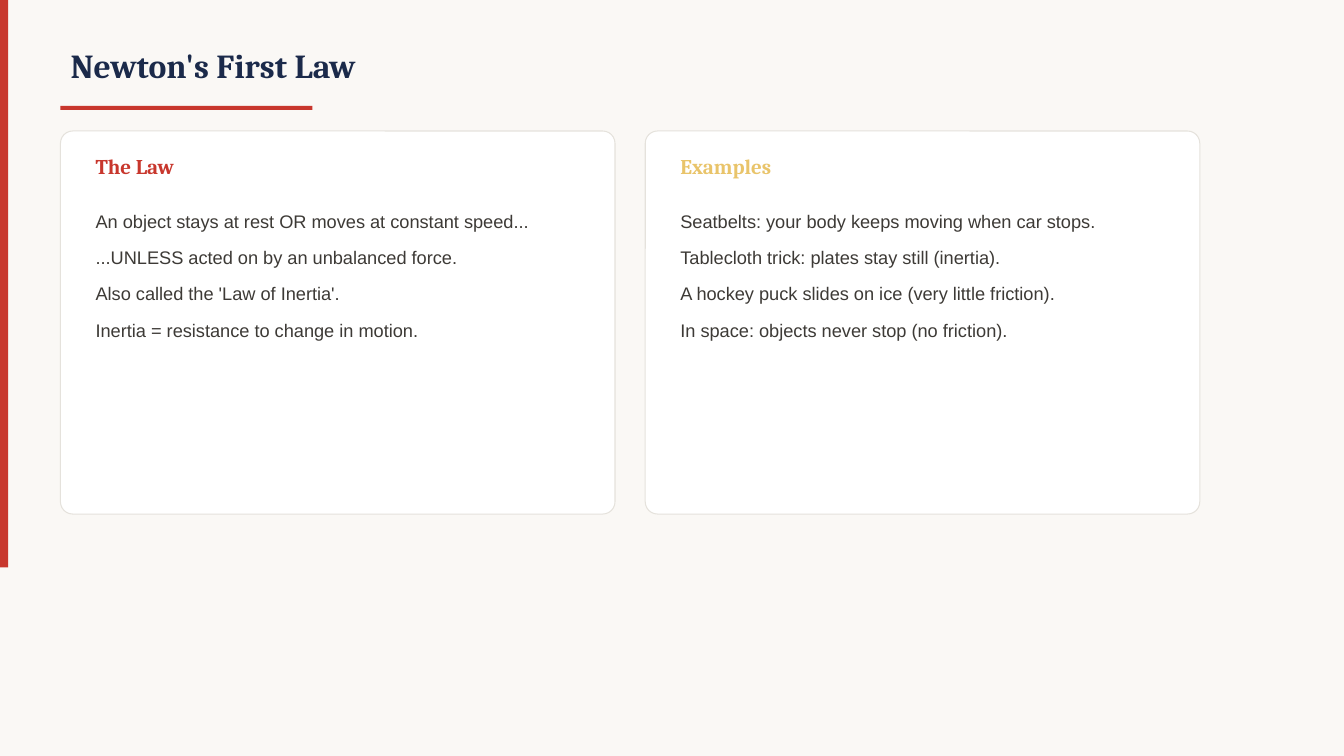
import pptx
import pptx.util
import pptx.dml.color
import pptx.enum.shapes
import pptx.enum.text

RGB = pptx.dml.color.RGBColor
SHAPE = pptx.enum.shapes.MSO_SHAPE
ANCHOR = pptx.enum.text.MSO_ANCHOR
PX = 9144

PAPER = RGB(0xFA, 0xF8, 0xF5)
WHITE = RGB(0xFF, 0xFF, 0xFF)
RED = RGB(0xC8, 0x37, 0x2D)
GOLD = RGB(0xE9, 0xC4, 0x6A)
NAVY = RGB(0x1B, 0x2A, 0x4A)
INK = RGB(0x3D, 0x3A, 0x36)
EDGE = RGB(0xE5, 0xE2, 0xDC)

CARDS = [
    ("The Law", RED, [
        "An object stays at rest OR moves at constant speed...",
        "...UNLESS acted on by an unbalanced force.",
        "Also called the 'Law of Inertia'.",
        "Inertia = resistance to change in motion.",
    ]),
    ("Examples", GOLD, [
        "Seatbelts: your body keeps moving when car stops.",
        "Tablecloth trick: plates stay still (inertia).",
        "A hockey puck slides on ice (very little friction).",
        "In space: objects never stop (no friction).",
    ]),
]


def scale(*box):
    return [pptx.util.Emu(n * PX) for n in box]


def add_block(slide, kind, box, fill):
    shape = slide.shapes.add_shape(kind, *scale(*box))
    shape.shadow.inherit = False
    shape.fill.solid()
    shape.fill.fore_color.rgb = fill
    shape.line.fill.background()
    return shape


def style(para, name, size, color, bold=False):
    for run in para.runs:
        run.font.name = name
        run.font.size = pptx.util.Pt(size)
        run.font.color.rgb = color
        run.font.bold = bold


def add_text(slide, box, lines, anchor):
    frame = slide.shapes.add_textbox(*scale(*box)).text_frame
    frame.word_wrap = True
    frame.vertical_anchor = anchor
    frame.text = "\n".join(lines)
    return frame.paragraphs


def add_head(slide, text, left, top, width, height):
    title = slide.shapes.title
    title.left, title.top, title.width, title.height = scale(left, top, width, height)
    frame = title.text_frame
    frame.text = text
    frame.word_wrap = True
    frame.auto_size = pptx.enum.text.MSO_AUTO_SIZE.NONE
    frame.vertical_anchor = ANCHOR.MIDDLE
    frame.paragraphs[0].alignment = pptx.enum.text.PP_ALIGN.LEFT
    style(frame.paragraphs[0], "Cambria", 24, NAVY, True)
    add_block(slide, SHAPE.RECTANGLE, (left, top + height + 5, 250, 4), RED)


def add_card(slide, head, color, lines, left, top, width, height):
    card = add_block(slide, SHAPE.ROUNDED_RECTANGLE, (left, top, width, height), WHITE)
    card.adjustments[0] = 0.032
    card.line.color.rgb = EDGE
    card.line.width = pptx.util.Pt(0.75)
    inner = left + 25, width - 50
    paras = add_text(slide, (inner[0], top + 15, inner[1], 40), [head], ANCHOR.MIDDLE)
    style(paras[0], "Cambria", 15, color, True)
    body = inner[0], top + 65, inner[1], height - 90
    for para in add_text(slide, body, lines, ANCHOR.TOP):
        para.line_spacing = 1.4
        para.space_after = pptx.util.Pt(4)
        style(para, "Arial", 13, INK)


def main():
    deck = pptx.Presentation()
    deck.slide_width, deck.slide_height = scale(1333, 750)
    slide = deck.slides.add_slide(deck.slide_layouts[5])
    slide.background.fill.solid()
    slide.background.fill.fore_color.rgb = PAPER
    add_block(slide, SHAPE.RECTANGLE, (0, 0, 8, 563), RED)
    add_head(slide, "Newton's First Law", 60, 30, 1000, 70)
    width, gap = 550, 30
    for i, (head, color, lines) in enumerate(CARDS):
        add_card(slide, head, color, lines, 60 + i * (width + gap), 130, width, 380)
    deck.save("out.pptx")


if __name__ == "__main__":
    main()
